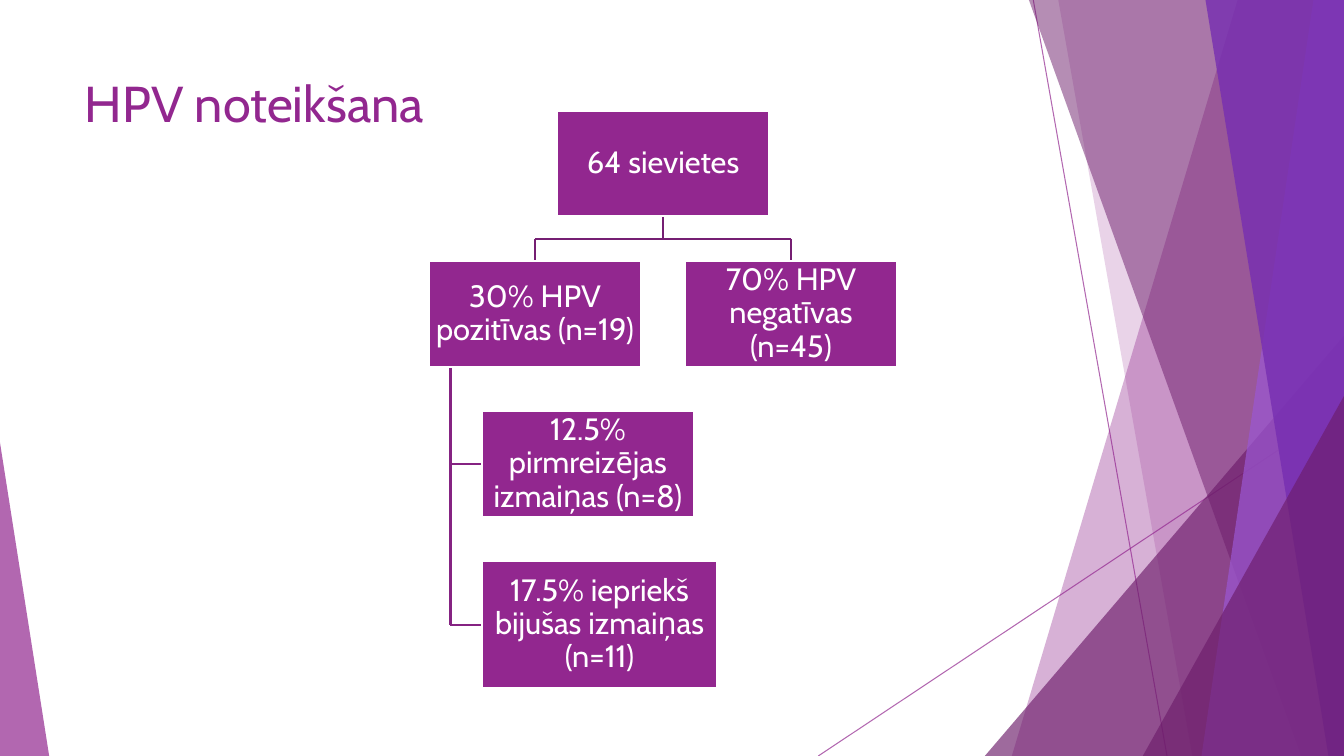
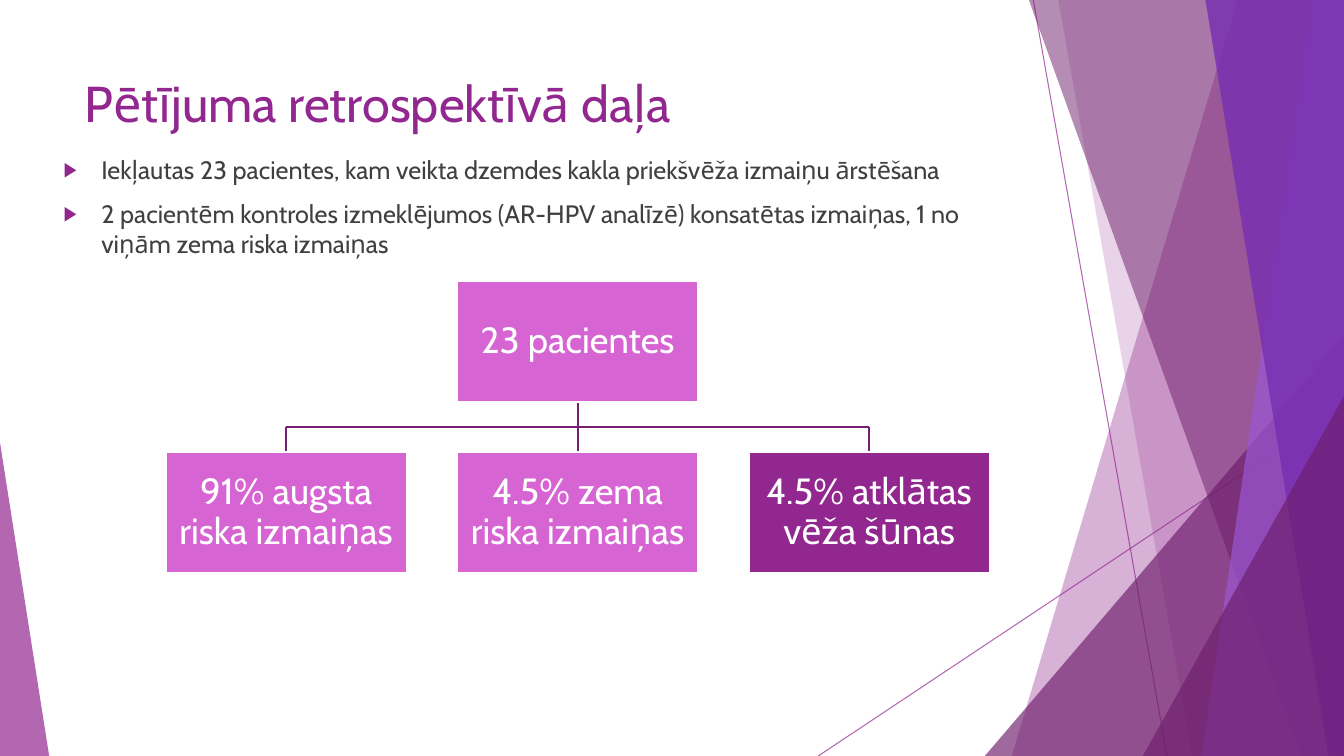
"""Build two slides on HPV testing, each with an organisation chart."""
from lxml import etree
from pptx import Presentation
from pptx.dml.color import RGBColor
from pptx.enum.shapes import MSO_CONNECTOR, MSO_SHAPE
from pptx.enum.text import MSO_ANCHOR, MSO_AUTO_SIZE, PP_ALIGN
from pptx.oxml.ns import qn
from pptx.util import Cm, Pt

RECTANGLE, TRIANGLE = MSO_SHAPE.RECTANGLE, MSO_SHAPE.ISOSCELES_TRIANGLE
STRAIGHT = MSO_CONNECTOR.STRAIGHT
TOP, MIDDLE = MSO_ANCHOR.TOP, MSO_ANCHOR.MIDDLE
LEFT, CENTER = PP_ALIGN.LEFT, PP_ALIGN.CENTER
NO_AUTOFIT = MSO_AUTO_SIZE.NONE

FONT = "Cabin"
COLOURS = {
    "purple": "92278F",
    "plum": "6D1D6B",
    "lilac": "9B57D3",
    "violet": "762EB1",
    "pink": "D665D3",
    "row_link": "751F73",
    "hanging_link": "852382",
    "text": "404040",
    "white": "FFFFFF",
}
SLIDE_WIDTH, SLIDE_HEIGHT = 33.87, 19.05
TITLE_BOX = (1.88, 1.7, 23.88, 3.66)
BODY_BOX = (1.35, 3.76, 23.88, 10.77)

BACKDROP_LINES = [
    (26.04, 0, 29.41, SLIDE_HEIGHT),
    (SLIDE_WIDTH, 10.24, 20.62, SLIDE_HEIGHT),
]
BACKDROP_AREAS = [
    ("band", (31.19, 25.5), "purple", 36),
    ("band", (26.67, 30.05), "purple", 20),
    ("triangle", (24.82, 8.46, 9.05, 10.59, 1), "plum", 66),
    ("band", (25.93, 32.79), "plum", 50),
    ("band", (33.1, 30.28), "lilac", 70),
    ("band", (30.38, 33.48), "violet", 80),
    ("triangle", (28.8, 9.98, 5.07, 9.07, 1), "plum", 66),
    ("triangle", (0, 11.15, 1.24, 7.9, 0), "purple", 70),
]

SLIDES = [
    {
        "title": "HPV noteikšana",
        "bullets": [],
        "chart": {
            "centre": 16.71, "top": 2.79, "width": 5.33, "size": 22,
            "root": ("64 sievietes", "purple"),
            "row": [
                ("30% HPV pozitīvas (n=19)", "purple"),
                ("70% HPV negatīvas (n=45)", "purple"),
            ],
            "hanging": [
                ("12.5% pirmreizējas izmaiņas (n=8)", "purple", 1, 1),
                ("17.5% iepriekš bijušas izmaiņas (n=11)", "purple", 1.11, 1.2),
            ],
        },
    },
    {
        "title": "Pētījuma retrospektīvā daļa",
        "bullets": [
            "Iekļautas 23 pacientes, kam veikta dzemdes kakla priekšvēža izmaiņu ārstēšana",
            "2 pacientēm kontroles izmeklējumos (AR-HPV analīzē) konsatētas izmaiņas, "
            "1 no viņām zema riska izmaiņas",
        ],
        "chart": {
            "centre": 14.56, "top": 7.09, "width": 6.07, "size": 26,
            "root": ("23 pacientes", "pink"),
            "row": [
                ("91% augsta riska izmaiņas", "pink"),
                ("4.5% zema riska izmaiņas", "pink"),
                ("4.5% atklātas vēža šūnas", "purple"),
            ],
            "hanging": [],
        },
    },
]


def rgb(name):
    return RGBColor.from_string(COLOURS[name])


def set_opacity(shape, percent):
    colour = next(shape.element.iter(qn("a:srgbClr")))
    etree.SubElement(colour, qn("a:alpha"), val=str(percent * 1000))


def set_font(paragraph, size, colour):
    paragraph.font.name = FONT
    paragraph.font.size = Pt(size)
    paragraph.font.color.rgb = rgb(colour)


def place(shape, box):
    shape.left, shape.top, shape.width, shape.height = map(Cm, box)


def add_line(slide, ends, colour, width):
    connector = slide.shapes.add_connector(STRAIGHT, *map(Cm, ends))
    connector.line.color.rgb = rgb(colour)
    connector.line.width = Pt(width)
    etree.SubElement(connector.element.find(qn("p:spPr")), qn("a:effectLst"))
    return connector


def add_area(slide, kind, geometry, colour, opacity):
    if kind == "band":
        top_x, bottom_x = geometry
        builder = slide.shapes.build_freeform(Cm(top_x), Cm(0))
        corners = [(SLIDE_WIDTH, 0), (SLIDE_WIDTH, SLIDE_HEIGHT), (bottom_x, SLIDE_HEIGHT)]
        builder.add_line_segments([(Cm(x), Cm(y)) for x, y in corners])
        shape = builder.convert_to_shape()
    else:
        *box, apex = geometry
        shape = slide.shapes.add_shape(TRIANGLE, *map(Cm, box))
        shape.adjustments[0] = apex
    shape.shadow.inherit = False
    shape.fill.solid()
    shape.fill.fore_color.rgb = rgb(colour)
    shape.line.fill.background()
    set_opacity(shape, opacity)
    return shape


def add_backdrop(slide, master):
    """Draw the shared backdrop and move it to the master."""
    parts = []
    for ends in BACKDROP_LINES:
        line = add_line(slide, ends, "purple", 0.75)
        set_opacity(line, 70)
        parts.append(line)
    parts += [add_area(slide, *area) for area in BACKDROP_AREAS]
    for position, part in enumerate(parts, start=2):
        master.shapes.element.insert(position, part.element)


def fill_title(title, text):
    place(title, TITLE_BOX)
    frame = title.text_frame
    frame.text = text
    frame.vertical_anchor = TOP
    frame.auto_size = NO_AUTOFIT
    frame.paragraphs[0].alignment = LEFT
    set_font(frame.paragraphs[0], 36, "purple")


def add_bullet(paragraph):
    properties = paragraph._p.get_or_add_pPr()
    properties.set("marL", str(Cm(0.95)))
    properties.set("indent", str(-Cm(0.95)))
    colour = etree.SubElement(properties, qn("a:buClr"))
    etree.SubElement(colour, qn("a:srgbClr"), val=COLOURS["purple"])
    etree.SubElement(properties, qn("a:buSzPct"), val="80000")
    etree.SubElement(properties, qn("a:buChar"), char="▶")


def fill_body(body, bullets):
    place(body, BODY_BOX)
    frame = body.text_frame
    frame.text = "\n".join(bullets)
    frame.auto_size = NO_AUTOFIT
    for paragraph in frame.paragraphs:
        paragraph.space_before = Pt(10)
        add_bullet(paragraph)
        set_font(paragraph, 18, "text")


def add_box(slide, box, text, colour, size):
    shape = slide.shapes.add_shape(RECTANGLE, *map(Cm, box))
    shape.shadow.inherit = False
    shape.fill.solid()
    shape.fill.fore_color.rgb = rgb(colour)
    shape.line.color.rgb = rgb("white")
    shape.line.width = Pt(1.5)
    frame = shape.text_frame
    frame.word_wrap = True
    frame.vertical_anchor = MIDDLE
    frame.margin_left = frame.margin_right = Cm(0.05)
    frame.margin_top = frame.margin_bottom = Cm(0.05)
    frame.text = text
    paragraph = frame.paragraphs[0]
    paragraph.alignment = CENTER
    paragraph.line_spacing = 0.9
    set_font(paragraph, size, "white")


def add_organisation_chart(slide, centre, top, width, size, root, row, hanging):
    height, gap = width / 2, width * 0.21
    row_top = top + height + gap
    bus = row_top - gap / 2
    row_left = centre - (len(row) * (width + gap) - gap) / 2
    lefts = [row_left + index * (width + gap) for index in range(len(row))]
    middles = [left + width / 2 for left in lefts]

    boxes = [((centre - width / 2, top, width, height), *root)]
    boxes += [((left, row_top, width, height), *item) for left, item in zip(lefts, row)]
    links = [((centre, top + height, centre, bus), "row_link"),
             ((middles[0], bus, middles[-1], bus), "row_link")]
    links += [((middle, bus, middle, row_top), "row_link") for middle in middles]

    trunk, hanging_left = row_left + width / 10, row_left + width / 4
    trunk_top = row_top + height
    hanging_top = trunk_top + gap
    for text, colour, width_scale, height_scale in hanging:
        box_height = height * height_scale
        boxes.append(((hanging_left, hanging_top, width * width_scale, box_height), text, colour))
        branch = hanging_top + box_height / 2
        links += [((trunk, trunk_top, trunk, branch), "hanging_link"),
                  ((trunk, branch, hanging_left, branch), "hanging_link")]
        trunk_top = branch
        hanging_top += box_height + gap

    for ends, colour in links:
        add_line(slide, ends, colour, 1.5)
    for box, text, colour in boxes:
        add_box(slide, box, text, colour, size)


def main():
    presentation = Presentation()
    presentation.slide_width, presentation.slide_height = Cm(SLIDE_WIDTH), Cm(SLIDE_HEIGHT)
    content_layout, title_layout = presentation.slide_layouts[1], presentation.slide_layouts[5]
    for content in SLIDES:
        bullets = content["bullets"]
        slide = presentation.slides.add_slide(content_layout if bullets else title_layout)
        fill_title(slide.shapes.title, content["title"])
        if bullets:
            fill_body(slide.placeholders[1], bullets)
        add_organisation_chart(slide, **content["chart"])
    add_backdrop(presentation.slides[0], presentation.slide_master)
    presentation.save("out.pptx")


if __name__ == "__main__":
    main()
